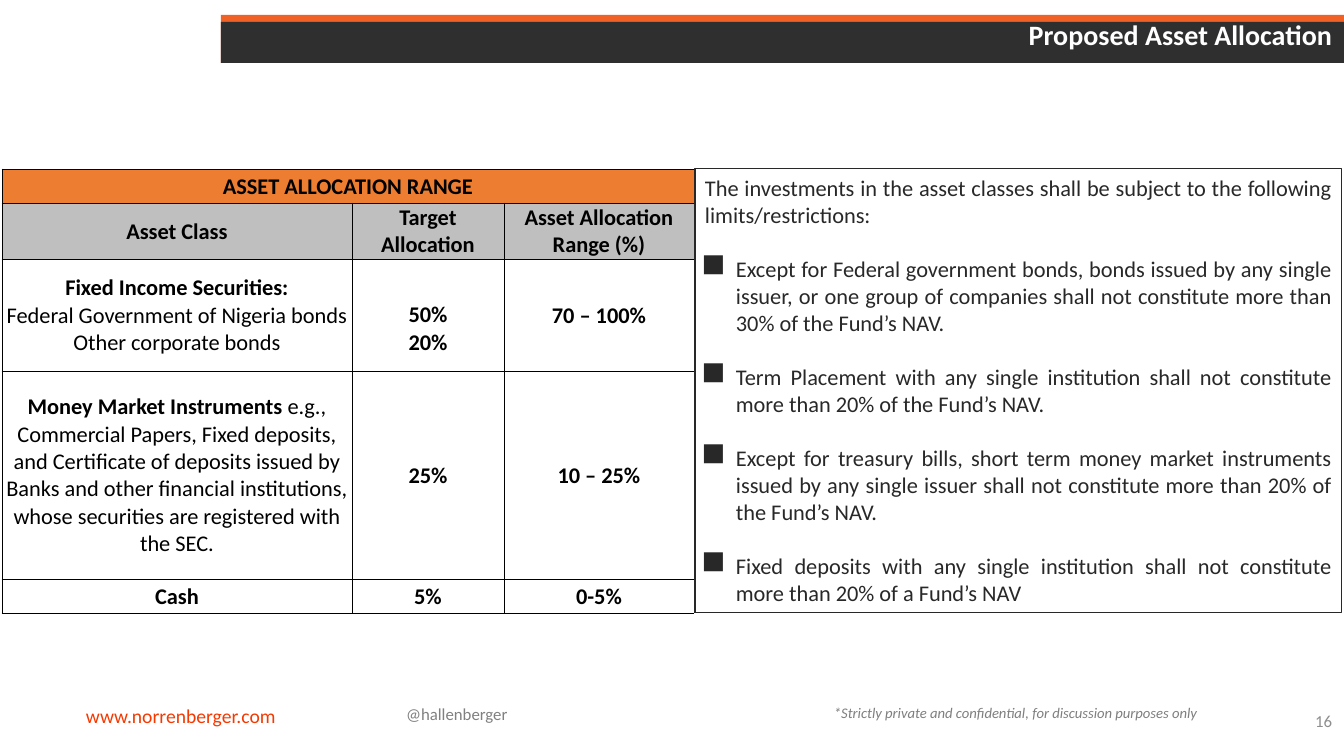
from lxml import etree
from pptx import Presentation
from pptx.dml.color import RGBColor
from pptx.enum.shapes import MSO_SHAPE
from pptx.enum.text import MSO_ANCHOR, PP_ALIGN
from pptx.oxml.ns import qn
from pptx.util import Emu, Pt

BLACK = RGBColor(0, 0, 0)
WHITE = RGBColor(255, 255, 255)
INK = RGBColor(0x28, 0x28, 0x28)
BAR_DARK = RGBColor(0x2F, 0x2F, 0x2F)
BAR_ORANGE = RGBColor(0xF1, 0x60, 0x24)
HEAD_ORANGE = RGBColor(0xED, 0x7D, 0x31)
HEAD_GREY = RGBColor(0xBF, 0xBF, 0xBF)
LINK_RED = RGBColor(0xF5, 0x39, 0x00)
NOTE_GREY = RGBColor(0x7F, 0x7F, 0x7F)
HANDLE_GREY = RGBColor(0x80, 0x80, 0x80)
PAGE_GREY = RGBColor(0x8E, 0x8E, 0x8E)

# Content: left, top, width, height in px
BARS = [((221, 15, 1123, 48), BAR_ORANGE), ((221, 22, 1123, 41), BAR_DARK)]
TITLE = ("Proposed Asset Allocation", (235, 15, 1107, 42),
         dict(size=Pt(20), bold=True), WHITE)
PAGE = ("16", (1293, 701, 49, 40), dict(size=Pt(12)), PAGE_GREY)
FOOTERS = [
    ("www.norrenberger.com", (81, 699, 223, 34), dict(size=Pt(14)), LINK_RED),
    ("*Strictly private and confidential, for discussion purposes only",
     (829, 699, 383, 34), dict(size=Pt(10.5), italic=True), NOTE_GREY),
    ("@hallenberger", (401, 699, 139, 34), dict(size=Pt(12)), HANDLE_GREY),
]

# Each cell is a list of paragraphs, each paragraph a list of (text, bold)
ROWS = [
    [[[("ASSET ALLOCATION RANGE", True)]], [], []],
    [[[("Asset Class", True)]], [[("Target Allocation", True)]],
     [[("Asset Allocation Range (%)", True)]]],
    [[[("Fixed Income Securities:", True)],
      [("Federal Government of Nigeria bonds", False)],
      [("Other corporate bonds", False)]],
     [[("50%", True)], [("20%", True)]], [[("70 – 100%", True)]]],
    [[[("Money Market Instruments", True),
       (" e.g., Commercial Papers, Fixed deposits, and Certificate of deposits "
        "issued by Banks and other financial institutions, whose securities are "
        "registered with the SEC.", False)]],
     [[("25%", True)]], [[("10 – 25%", True)]]],
    [[[("Cash", True)]], [[("5%", True)]], [[("0-5%", True)]]],
]
ROW_FILLS = {0: HEAD_ORANGE, 1: HEAD_GREY}
TABLE_LEFT, TABLE_TOP = 2, 169
COLS = [350, 152, 190]
HEIGHTS = [34, 56, 112, 208, 34]
LINE = 27  # one line of 16 pt text
TARGETS = (2, 1)  # cell whose figures line up with the bond names

LIMITS_AT = (695, 169, 647, 444)
LIMITS_INTRO = ("The investments in the asset classes shall be subject to the "
                "following limits/restrictions:")
LIMITS = [
    "Except for Federal government bonds, bonds issued by any single issuer, or "
    "one group of companies shall not constitute more than 30% of the Fund’s NAV.",
    "Term Placement with any single institution shall not constitute more than "
    "20% of the Fund’s NAV.",
    "Except for treasury bills, short term money market instruments issued by any "
    "single issuer shall not constitute more than 20% of the Fund’s NAV.",
    "Fixed deposits with any single institution shall not constitute more than "
    "20% of a Fund’s NAV",
]


def px(n):
    return Emu(round(n * 914400 / 100.8))


def box(at):
    return [px(n) for n in at]


def put(obj, **values):
    for name, value in values.items():
        setattr(obj, name, value)


def add_run(p, text, color, **font):
    r = p.add_run()
    r.text = text
    put(r.font, name="Calibri", **font)
    r.font.color.rgb = color


def add_text(s, item, inset=None, align=PP_ALIGN.LEFT, anchor=MSO_ANCHOR.TOP):
    text, at, font, color = item
    tf = s.shapes.add_textbox(*box(at)).text_frame
    put(tf, word_wrap=True, vertical_anchor=anchor)
    if inset:
        put(tf, margin_left=inset, margin_right=inset,
            margin_top=inset, margin_bottom=inset)
    p = tf.paragraphs[0]
    p.alignment = align
    add_run(p, text, color, **font)
    return p


def add_rect(s, at):
    sp = s.shapes.add_shape(MSO_SHAPE.RECTANGLE, *box(at))
    sp.shadow.inherit = False
    return sp


def add_borders(cell):
    tcPr = cell._tc.get_or_add_tcPr()
    for side in ("a:lnL", "a:lnR", "a:lnT", "a:lnB"):
        ln = etree.SubElement(tcPr, qn(side), w=str(Pt(0.5)))
        fill = etree.SubElement(ln, qn("a:solidFill"))
        etree.SubElement(fill, qn("a:srgbClr"), val=str(BLACK))


def add_bullet(p):
    pPr = p._p.get_or_add_pPr()
    pPr.set("marL", str(px(31)))
    pPr.set("indent", str(-px(31)))
    etree.SubElement(pPr, qn("a:buFont"), typeface="Wingdings 2")
    etree.SubElement(pPr, qn("a:buChar"), char="➢")


prs = Presentation()
put(prs, slide_width=px(1344), slide_height=px(756))
s = prs.slides.add_slide(prs.slide_layouts[6])

# Footer, header bars, title and page number
for item in FOOTERS:
    add_text(s, item, inset=px(5))
for at, color in BARS:
    bar = add_rect(s, at)
    bar.fill.solid()
    bar.fill.fore_color.rgb = color
    bar.line.fill.background()
title = add_text(s, TITLE, align=PP_ALIGN.RIGHT, anchor=MSO_ANCHOR.MIDDLE)
title.line_spacing = 0.9
add_text(s, PAGE, align=PP_ALIGN.RIGHT, anchor=MSO_ANCHOR.MIDDLE)

# Allocation table
table = s.shapes.add_table(
    len(ROWS), len(COLS), px(TABLE_LEFT), px(TABLE_TOP),
    px(sum(COLS)), px(sum(HEIGHTS))).table
put(table, first_row=False, horz_banding=False)
for col, width in zip(table.columns, COLS):
    col.width = px(width)
for row, height in zip(table.rows, HEIGHTS):
    row.height = px(height)
table.cell(0, 0).merge(table.cell(0, len(COLS) - 1))
for i, row in enumerate(ROWS):
    for j, paragraphs in enumerate(row):
        cell = table.cell(i, j)
        put(cell, vertical_anchor=MSO_ANCHOR.MIDDLE, margin_left=px(1),
            margin_right=px(1), margin_bottom=0,
            margin_top=px(1 + LINE if (i, j) == TARGETS else 1))
        add_borders(cell)
        if i in ROW_FILLS:
            cell.fill.solid()
            cell.fill.fore_color.rgb = ROW_FILLS[i]
        else:
            cell.fill.background()
        tf = cell.text_frame
        for k, runs in enumerate(paragraphs):
            p = tf.add_paragraph() if k else tf.paragraphs[0]
            p.alignment = PP_ALIGN.CENTER
            for text, bold in runs:
                add_run(p, text, BLACK, size=Pt(16), bold=bold)

# Limits panel
panel = add_rect(s, LIMITS_AT)
panel.fill.background()
panel.line.color.rgb = INK
panel.line.width = Pt(0.75)
tf = panel.text_frame
put(tf, word_wrap=True, vertical_anchor=MSO_ANCHOR.TOP)
for k, text in enumerate([LIMITS_INTRO] + LIMITS):
    p = tf.add_paragraph() if k else tf.paragraphs[0]
    p.alignment = PP_ALIGN.JUSTIFY
    if k:
        p.space_before = Pt(19.5)
        add_bullet(p)
    add_run(p, text, INK, size=Pt(16))

prs.save("out.pptx")
